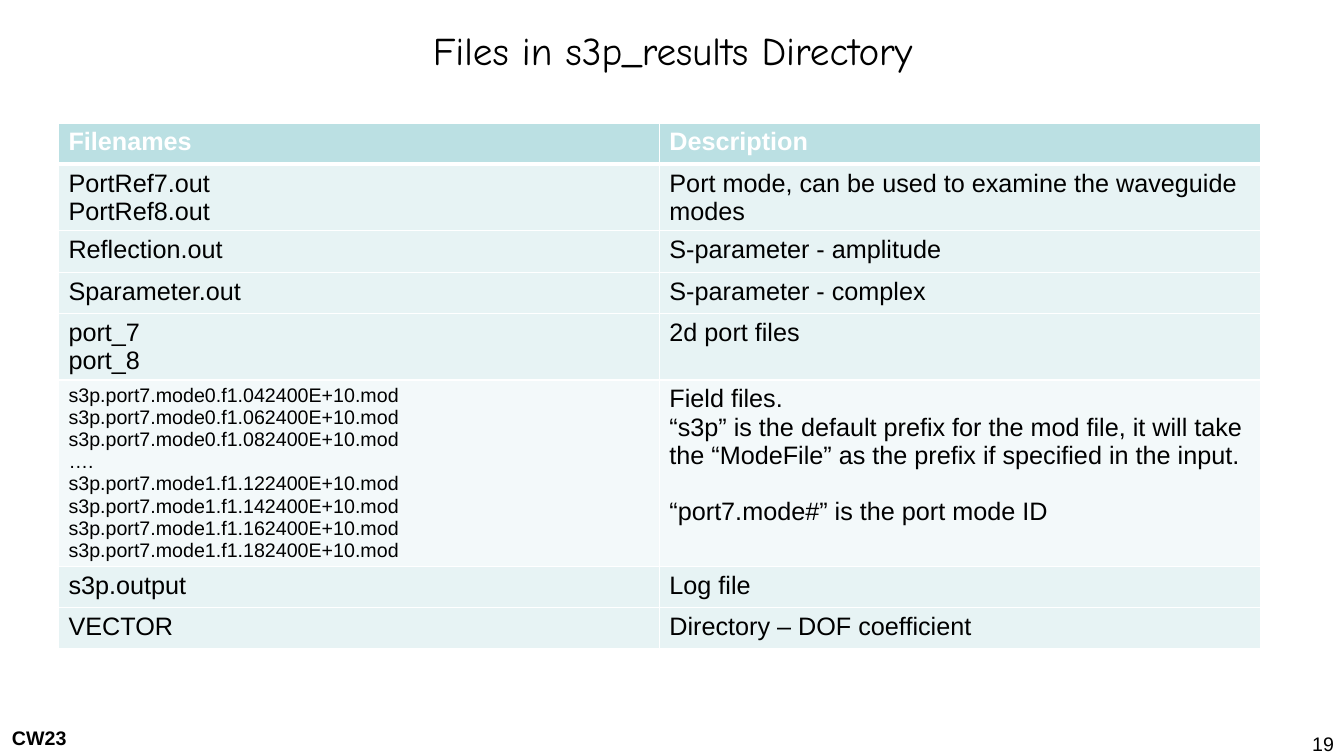
from dataclasses import dataclass
from lxml.etree import SubElement
from pptx import Presentation
from pptx.dml.color import RGBColor
from pptx.enum.text import MSO_ANCHOR, PP_ALIGN
from pptx.oxml.ns import qn
from pptx.util import Inches, Pt

TITLE = "Files in s3p_results Directory"
EVENT = "CW23"
PAGE = "19"
HEADS = ("Filenames", "Description")
FILES = [
    (["PortRef7.out", "PortRef8.out"],
     ["Port mode, can be used to examine the waveguide modes"]),
    (["Reflection.out"], ["S-parameter - amplitude"]),
    (["Sparameter.out"], ["S-parameter - complex"]),
    (["port_7", "port_8"], ["2d port files"]),
    (["s3p.port7.mode0.f1.042400E+10.mod",
      "s3p.port7.mode0.f1.062400E+10.mod",
      "s3p.port7.mode0.f1.082400E+10.mod",
      "….",
      "s3p.port7.mode1.f1.122400E+10.mod",
      "s3p.port7.mode1.f1.142400E+10.mod",
      "s3p.port7.mode1.f1.162400E+10.mod",
      "s3p.port7.mode1.f1.182400E+10.mod"],
     ["Field files.",
      "“s3p” is the default prefix for the mod file, it will take the "
      "“ModeFile” as the prefix if specified in the input.",
      "“port7.mode#” is the port mode ID"]),
    (["s3p.output"], ["Log file"]),
    (["VECTOR"], ["Directory – DOF coefficient"]),
]
FIELD_ROW = 5
HEIGHTS = [0.41, 0.66, 0.41, 0.41, 0.66, 1.84, 0.41, 0.41]


@dataclass(frozen=True)
class Theme:
    ink: str = "000000"
    white: str = "FFFFFF"
    head: str = "BBE0E3"
    dark: str = "E7F3F4"
    light: str = "F3F9FA"
    font: str = "Arial"
    hand: str = "Comic Neue"
    large: int = 28
    body: int = 18
    small: int = 14
    thin: int = 1
    thick: int = 3


THEME = Theme()


def write(frame, lines, size=THEME.body, color=THEME.ink, font=THEME.font,
          bold=False, align=PP_ALIGN.LEFT, gap=0):
    """Fill a text frame; gap is the space in points before the last line."""
    frame.word_wrap = True
    for i, line in enumerate(lines):
        para = frame.paragraphs[0] if i == 0 else frame.add_paragraph()
        para.alignment = align
        para.space_before = Pt(gap if i and i == len(lines) - 1 else 0)
        run = para.add_run()
        run.text = line
        run.font.name = font
        run.font.size = Pt(size)
        run.font.bold = bold
        run.font.color.rgb = RGBColor.from_string(color)


def label(slide, text, box, **style):
    shape = slide.shapes.add_textbox(*map(Inches, box))
    write(shape.text_frame, [text], size=THEME.small, **style)


def edge(cell, row):
    """Draw white borders, thick between the head and the first row."""
    props = cell._tc.get_or_add_tcPr()
    heavy = {(0, "B"), (1, "T")}
    for side in "LRTB":
        width = THEME.thick if (row, side) in heavy else THEME.thin
        line = SubElement(props, qn(f"a:ln{side}"), w=str(Pt(width)))
        fill = SubElement(line, qn("a:solidFill"))
        SubElement(fill, qn("a:srgbClr"), val=THEME.white)


def paint(cell, row, color):
    edge(cell, row)
    cell.fill.solid()
    cell.fill.fore_color.rgb = RGBColor.from_string(color)


def add_files(slide):
    rows = [tuple([head] for head in HEADS)] + FILES
    box = (0.58, 1.22, 11.92, sum(HEIGHTS))
    table = slide.shapes.add_table(
        len(rows), len(HEADS), *map(Inches, box)).table
    table.horz_banding = False
    for col in table.columns:
        col.width = Inches(box[2] / len(HEADS))
    for r, row in enumerate(rows):
        table.rows[r].height = Inches(HEIGHTS[r])
        for c, lines in enumerate(row):
            cell = table.cell(r, c)
            style, color = {}, THEME.dark
            if r == 0:
                style, color = {"color": THEME.white, "bold": True}, THEME.head
            elif r == FIELD_ROW:
                style = {"gap": 20} if c else {"size": THEME.small}
                color = THEME.light
            write(cell.text_frame, lines, **style)
            paint(cell, r, color)


def main():
    deck = Presentation()
    deck.slide_width, deck.slide_height = Inches(13.33), Inches(7.5)
    slide = deck.slides.add_slide(deck.slide_layouts[5])
    title = slide.shapes.title
    title.left, title.top = Inches(0.67), Inches(0.06)
    title.width, title.height = Inches(12), Inches(0.87)
    title.text_frame.vertical_anchor = MSO_ANCHOR.MIDDLE
    write(title.text_frame, [TITLE], size=THEME.large, font=THEME.hand,
          align=PP_ALIGN.CENTER)
    add_files(slide)
    label(slide, EVENT, (0.02, 7.15, 1.81, 0.34), bold=True)
    label(slide, PAGE, (12.39, 7.21, 0.94, 0.29), align=PP_ALIGN.RIGHT)
    deck.save("out.pptx")


if __name__ == "__main__":
    main()
